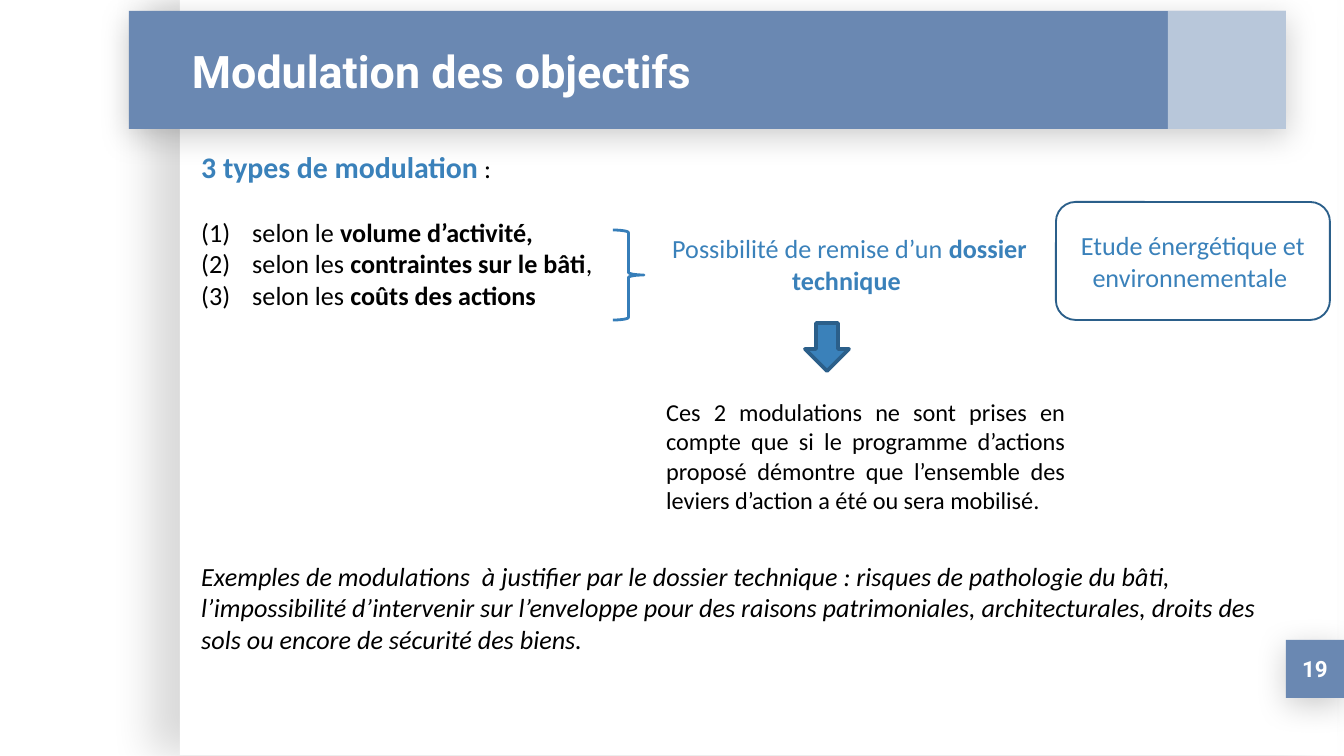
import pptx
import pptx.util
import pptx.dml.color
import pptx.enum.shapes
import pptx.enum.text
import pptx.oxml.ns
import lxml.etree

RGB = pptx.dml.color.RGBColor
SHAPE = pptx.enum.shapes.MSO_SHAPE
ALIGN = pptx.enum.text.PP_ALIGN
ANCHOR = pptx.enum.text.MSO_ANCHOR
qn = pptx.oxml.ns.qn

WHITE = RGB(0xFF, 0xFF, 0xFF)
BLACK = RGB(0, 0, 0)
SLATE = RGB(0x6A, 0x88, 0xB2)
BLUE = RGB(0x3A, 0x81, 0xBA)
BRACE_BLUE = RGB(0x36, 0x7E, 0xB9)
DARK_BLUE = RGB(0x2B, 0x5F, 0x8A)

SCALE = 914400 / 134.4  # EMU per px
BAR_SHADOW = (20, 16.9, 3.8, 90)  # opacity %, blur pt, distance pt, degrees
PAGE_SHADOW = (15, 22.5, 15, 180)


def px(n):
    return pptx.util.Emu(round(n * SCALE))


class Deck:
    body_font = "Calibri"
    head_font = "Roboto"

    def __init__(self, prs):
        self.s = prs.slides.add_slide(prs.slide_layouts[6])

    def shape(self, kind, box, fill=None, line=None, weight=1, shadow=None, alpha=None):
        sp = self.s.shapes.add_shape(kind, *map(px, box))
        sp.shadow.inherit = False
        if fill is None:
            sp.fill.background()
        else:
            sp.fill.solid()
            sp.fill.fore_color.rgb = fill
        if line is None:
            sp.line.fill.background()
        else:
            sp.line.color.rgb = line
            sp.line.width = pptx.util.Pt(weight)
        if alpha:
            clr = sp.fill._xPr.find(".//" + qn("a:srgbClr"))
            lxml.etree.SubElement(clr, qn("a:alpha"), val=str(alpha * 1000))
        if shadow:
            self.add_shadow(sp, *shadow)
        return sp

    def add_shadow(self, sp, opacity, blur, dist, angle):
        effects = sp._element.spPr.find(qn("a:effectLst"))
        outer = lxml.etree.SubElement(
            effects, qn("a:outerShdw"), blurRad=str(pptx.util.Pt(blur)),
            dist=str(pptx.util.Pt(dist)), dir=str(angle * 60000),
            algn="bl", rotWithShape="0")
        clr = lxml.etree.SubElement(outer, qn("a:srgbClr"), val=str(BLACK))
        lxml.etree.SubElement(clr, qn("a:alpha"), val=str(opacity * 1000))

    def box(self, box, anchor=ANCHOR.TOP, inset=None):
        tf = self.s.shapes.add_textbox(*map(px, box)).text_frame
        tf.word_wrap = True
        tf.vertical_anchor = anchor
        if inset:
            tf.margin_left = tf.margin_right = px(inset)
            tf.margin_top = tf.margin_bottom = px(inset)
        return tf

    def para(self, tf, runs, size=14, color=BLACK, align=ALIGN.LEFT,
             before=0, font=None, numbered=False):
        """Write runs given as (text, style), with b for bold and i for italic."""
        p = tf.paragraphs[0] if not tf.text else tf.add_paragraph()
        p.alignment = align
        if before:
            p.space_before = pptx.util.Pt(before)
        if numbered:
            pPr = p._p.get_or_add_pPr()
            pPr.set("marL", str(px(51)))
            pPr.set("indent", str(-px(51)))
            lxml.etree.SubElement(pPr, qn("a:buFont"), typeface="+mj-lt")
            lxml.etree.SubElement(pPr, qn("a:buAutoNum"), type="arabicParenBoth")
        for text, style in runs:
            r = p.add_run()
            r.text = text
            r.font.name = font or self.body_font
            r.font.size = pptx.util.Pt(size)
            r.font.color.rgb = color
            r.font.bold = "b" in style
            r.font.italic = "i" in style
        return p


def main():
    prs = pptx.Presentation()
    prs.slide_width, prs.slide_height = px(1344), px(756)
    d = Deck(prs)

    # Page panel, page-number tile and title bar
    d.shape(SHAPE.RECTANGLE, (180, -1, 1157, 756), WHITE, shadow=PAGE_SHADOW)
    tile = (1286, 640, 58, 58)
    d.shape(SHAPE.RECTANGLE, tile, SLATE, shadow=BAR_SHADOW)
    d.shape(SHAPE.RECTANGLE, (129, 11, 1157, 118), SLATE, shadow=BAR_SHADOW)
    d.shape(SHAPE.RECTANGLE, (1168, 11, 118, 118), WHITE, alpha=53)
    for box, text, size, align in (
            (tile, "19", 12, ALIGN.CENTER),
            ((179, 12, 990, 118), "Modulation des objectifs", 24, ALIGN.LEFT)):
        tf = d.box(box, ANCHOR.MIDDLE, inset=13)
        d.para(tf, [(text, "b")], size, WHITE, align, font=d.head_font)

    # Main text: heading, numbered list, examples
    tf = d.box((188, 142, 1098, 525))
    p = d.para(tf, [("3 types de modulation", "b"), (" :", "")], 16, BLUE)
    p.runs[1].font.size = pptx.util.Pt(14)
    p.runs[1].font.color.rgb = BLACK
    items = (
        [("selon le ", ""), ("volume d’activité,", "b")],
        [("selon les ", ""), ("contraintes sur le bâti", "b"), (",", "")],
        [("selon les ", ""), ("coûts des actions", "b")],
    )
    for i, runs in enumerate(items):
        d.para(tf, runs, before=0 if i else 17, numbered=True)
    d.para(tf, [("Exemples de modulations  à justifier par le dossier technique : "
                 "risques de pathologie du bâti, l’impossibilité d’intervenir sur "
                 "l’enveloppe pour des raisons patrimoniales, architecturales, droits "
                 "des sols ou encore de sécurité des biens.", "i")], before=134)

    # Brace leading to the technical file
    d.shape(SHAPE.RIGHT_BRACE, (613, 230, 31, 90), line=BRACE_BLUE, weight=1.5)
    tf = d.box((637, 226, 425, 77))
    d.para(tf, [("Possibilité de remise d’un ", ""), ("dossier technique ", "b")],
           color=BLUE, align=ALIGN.CENTER)

    # Arrow down to the condition
    d.shape(SHAPE.DOWN_ARROW, (805, 323, 44, 48), BLUE, DARK_BLUE, 2)
    tf = d.box((653, 391, 425, 160))
    d.para(tf, [("Ces 2 modulations ne sont prises en compte que si le programme "
                 "d’actions proposé démontre que l’ensemble des leviers d’action "
                 "a été ou sera mobilisé. ", "")], 13, align=ALIGN.JUSTIFY)

    # Study box
    sp = d.shape(SHAPE.ROUNDED_RECTANGLE, (1056, 202, 274, 118), line=DARK_BLUE)
    sp.text_frame.word_wrap = True
    sp.text_frame.vertical_anchor = ANCHOR.MIDDLE
    d.para(sp.text_frame, [("Etude énergétique et environnementale ", "")],
           color=BLUE, align=ALIGN.CENTER)

    prs.save("out.pptx")


if __name__ == "__main__":
    main()
